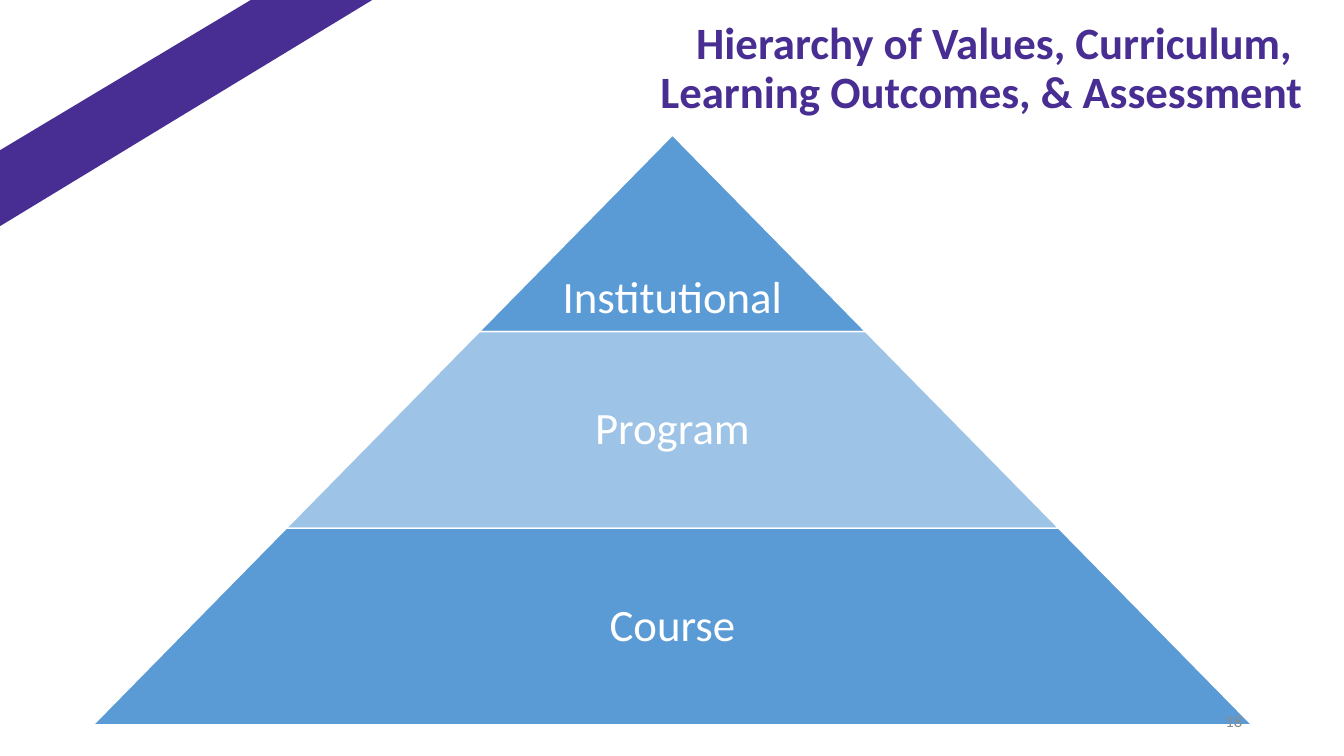
"""Build a slide with a three-tier pyramid, a corner band and a title."""
from dataclasses import dataclass

from pptx import Presentation
from pptx.dml.color import RGBColor
from pptx.enum.shapes import MSO_SHAPE
from pptx.enum.text import MSO_ANCHOR, PP_ALIGN
from pptx.util import Inches, Pt

PURPLE, BLUE, PALE = "482E92", "5B9BD5", "9DC3E6"
WHITE, GREY = "FFFFFF", "8C8C8C"
MID, TOP, HIGH, STEP = 6.67, 1.34, 1.95, 3.83
BAND = [(-0.1, 1.55), (2.67, -0.11), (3.37, -0.11), (3.84, -0.09), (-0.11, 2.31)]


@dataclass
class Tier:
    """One level of the pyramid."""
    name: str
    fill: str
    anchor: MSO_ANCHOR = MSO_ANCHOR.MIDDLE


@dataclass
class Label:
    """One text box and its style."""
    lines: list[str]
    box: tuple[float, float, float, float]
    size: int
    color: str
    align: PP_ALIGN
    anchor: MSO_ANCHOR
    bold: bool = False
    space: float = 0.9
    inset: tuple[float, float] = (0.1, 0.05)


TIERS = [
    Tier("Institutional", BLUE, MSO_ANCHOR.BOTTOM),
    Tier("Program", PALE),
    Tier("Course", BLUE),
]
TITLE = Label(["Hierarchy of Values, Curriculum, ", "Learning Outcomes, & Assessment"],
              (1.52, 0.16, 11.5, 1.38), 32, PURPLE, PP_ALIGN.RIGHT, MSO_ANCHOR.TOP, True)
NUMBER = Label(["18"], (9.42, 6.95, 3, 0.4), 12, GREY,
               PP_ALIGN.RIGHT, MSO_ANCHOR.MIDDLE, space=1)


def paint(code: str) -> RGBColor:
    """Turn a hex string into a colour."""
    return RGBColor.from_string(code)


def draw_label(slide, label: Label) -> None:
    """Add a text box, one run for each line."""
    frame = slide.shapes.add_textbox(*map(Inches, label.box)).text_frame
    frame.word_wrap = True
    frame.vertical_anchor = label.anchor
    side, edge = map(Inches, label.inset)
    frame.margin_left = frame.margin_right = side
    frame.margin_top = frame.margin_bottom = edge
    para = frame.paragraphs[0]
    para.alignment = label.align
    para.line_spacing = label.space
    for i, line in enumerate(label.lines):
        if i:
            para.add_line_break()
        run = para.add_run()
        run.text = line
        run.font.name = "Calibri"
        run.font.size = Pt(label.size)
        run.font.bold = label.bold
        run.font.color.rgb = paint(label.color)


def draw_tier(slide, tier: Tier, row: int) -> None:
    """Add a trapezoid that widens by one step per row, with its name."""
    width = STEP * (row + 1)
    box = (MID - width / 2, TOP + row * HIGH, width, HIGH)
    shape = slide.shapes.add_shape(MSO_SHAPE.TRAPEZOID, *map(Inches, box))
    shape.adjustments[0] = STEP / 2 / HIGH
    shape.shadow.inherit = False
    shape.fill.solid()
    shape.fill.fore_color.rgb = paint(tier.fill)
    shape.line.color.rgb = paint(WHITE)
    shape.line.width = Pt(1)
    draw_label(slide, Label([tier.name], box, 32, WHITE, PP_ALIGN.CENTER,
                            tier.anchor, inset=(0.04, 0.08)))


def draw_band(slide) -> None:
    """Add the slanted band in the corner."""
    first, *rest = [(Inches(x), Inches(y)) for x, y in BAND]
    pen = slide.shapes.build_freeform(*first)
    pen.add_line_segments(rest, close=True)
    band = pen.convert_to_shape()
    band.shadow.inherit = False
    band.fill.solid()
    band.fill.fore_color.rgb = paint(PURPLE)
    band.line.fill.background()


def main() -> None:
    """Build and save the deck."""
    deck = Presentation()
    deck.slide_width, deck.slide_height = Inches(13.33), Inches(7.5)
    slide = deck.slides.add_slide(deck.slide_layouts[6])
    draw_band(slide)
    for row, tier in enumerate(TIERS):
        draw_tier(slide, tier, row)
    draw_label(slide, NUMBER)
    draw_label(slide, TITLE)
    deck.save("out.pptx")


if __name__ == "__main__":
    main()
